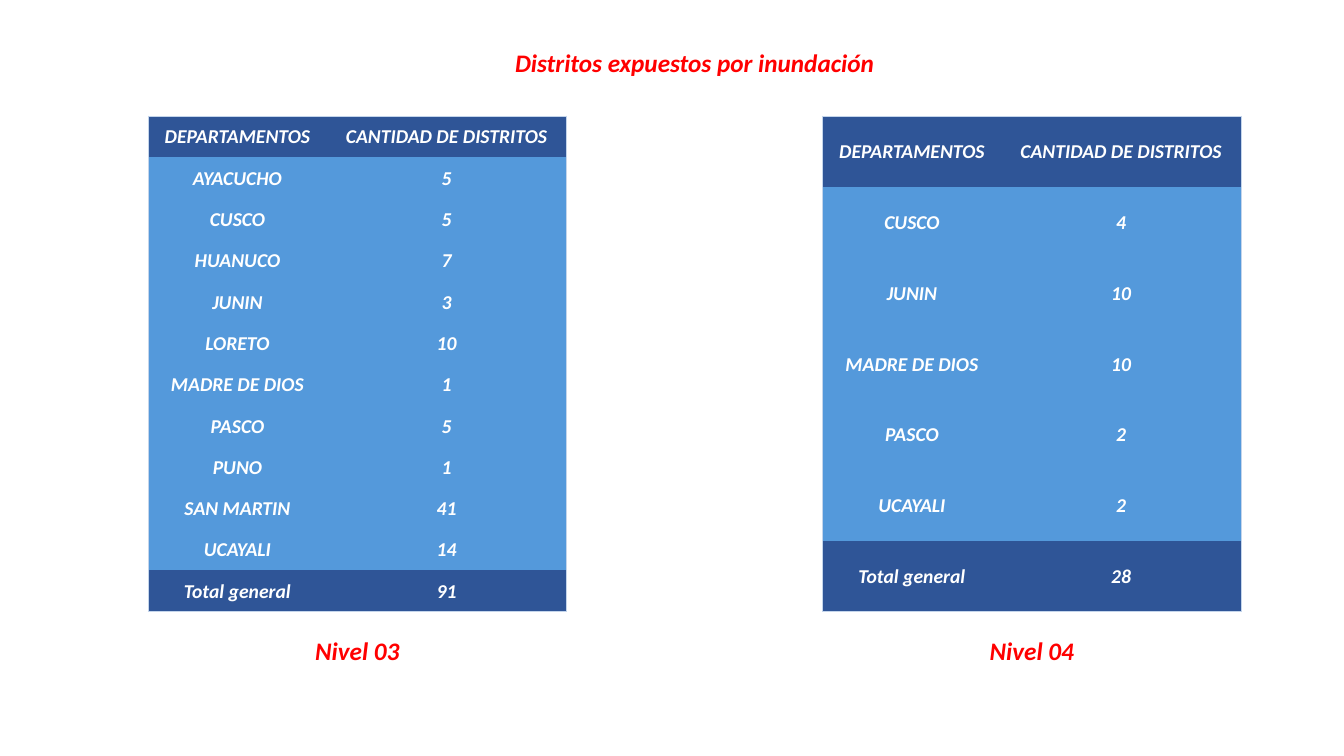
from lxml.etree import SubElement
from pptx import Presentation
from pptx.dml.color import RGBColor
from pptx.enum.text import MSO_ANCHOR, PP_ALIGN
from pptx.oxml.ns import qn
from pptx.util import Inches, Pt

TITLE = "Distritos expuestos por inundación"
HEADER = ("DEPARTAMENTOS", "CANTIDAD DE DISTRITOS")
LEVELS = [
    ("Nivel 03", [
        ("AYACUCHO", 5), ("CUSCO", 5), ("HUANUCO", 7), ("JUNIN", 3),
        ("LORETO", 10), ("MADRE DE DIOS", 1), ("PASCO", 5), ("PUNO", 1),
        ("SAN MARTIN", 41), ("UCAYALI", 14), ("Total general", 91),
    ]),
    ("Nivel 04", [
        ("CUSCO", 4), ("JUNIN", 10), ("MADRE DE DIOS", 10), ("PASCO", 2),
        ("UCAYALI", 2), ("Total general", 28),
    ]),
]
COLORS = {"accent": "FF0000", "text": "FFFFFF", "band": "2F5597",
          "body": "5499DB", "border": "C4D5EB"}
FONT = "Calibri"
COLUMNS = (1.77, 2.38)
TABLE_WIDTH = sum(COLUMNS)
TABLE_LEFT, TABLE_TOP, TABLE_HEIGHT = 1.47, 1.15, 4.92
TABLE_STEP = 6.69
TITLE_TOP, CAPTION_TOP, LABEL_HEIGHT = 0.42, 6.25, 0.4
TITLE_WIDTH, CAPTION_WIDTH = 3.8, 1.2


def write(frame, text, size=18, color="accent"):
    para = frame.paragraphs[0]
    para.alignment = PP_ALIGN.CENTER
    span = para.add_run()
    span.text = text
    font = span.font
    font.name, font.size = FONT, Pt(size)
    font.bold = font.italic = True
    font.color.rgb = RGBColor.from_string(COLORS[color])


def add_label(page, text, center, top, width, wrap=True):
    box = page.shapes.add_textbox(Inches(center - width / 2), Inches(top),
                                  Inches(width), Inches(LABEL_HEIGHT))
    box.text_frame.word_wrap = wrap
    write(box.text_frame, text)


def set_borders(cell, outer_edges):
    properties = cell._tc.get_or_add_tcPr()
    for position, (edge, visible) in enumerate(outer_edges.items()):
        line = SubElement(properties, qn(f"a:ln{edge}"), w=str(Pt(0.5)))
        if visible:
            fill = SubElement(line, qn("a:solidFill"))
            SubElement(fill, qn("a:srgbClr"), val=COLORS["border"])
        else:
            SubElement(line, qn("a:noFill"))
        properties.insert(position, line)


def add_district_table(page, left, records):
    rows = [HEADER, *records]
    last_row, last_column = len(rows) - 1, len(COLUMNS) - 1
    table = page.shapes.add_table(len(rows), len(COLUMNS), Inches(left), Inches(TABLE_TOP),
                                  Inches(TABLE_WIDTH), Inches(TABLE_HEIGHT)).table
    table.horz_banding = False
    for column, width in zip(table.columns, COLUMNS):
        column.width = Inches(width)
    for r, values in enumerate(rows):
        table.rows[r].height = Inches(TABLE_HEIGHT / len(rows))
        for c, value in enumerate(values):
            cell = table.cell(r, c)
            cell.margin_left = cell.margin_right = cell.margin_top = Inches(0.01)
            cell.margin_bottom = 0
            cell.vertical_anchor = MSO_ANCHOR.MIDDLE
            cell.fill.solid()
            shade = "band" if r in (0, last_row) else "body"
            cell.fill.fore_color.rgb = RGBColor.from_string(COLORS[shade])
            set_borders(cell, {"L": c == 0, "R": c == last_column,
                               "T": r == 0, "B": r == last_row})
            write(cell.text_frame, str(value), size=14, color="text")


def main():
    deck = Presentation()
    deck.slide_width, deck.slide_height = Inches(13.33), Inches(7.5)
    page = deck.slides.add_slide(deck.slide_layouts[6])
    first_center = TABLE_LEFT + TABLE_WIDTH / 2
    add_label(page, TITLE, first_center + TABLE_STEP / 2, TITLE_TOP, TITLE_WIDTH, wrap=False)
    for index, (caption, records) in enumerate(LEVELS):
        offset = index * TABLE_STEP
        add_district_table(page, TABLE_LEFT + offset, records)
        add_label(page, caption, first_center + offset, CAPTION_TOP, CAPTION_WIDTH)
    deck.save("out.pptx")


if __name__ == "__main__":
    main()
